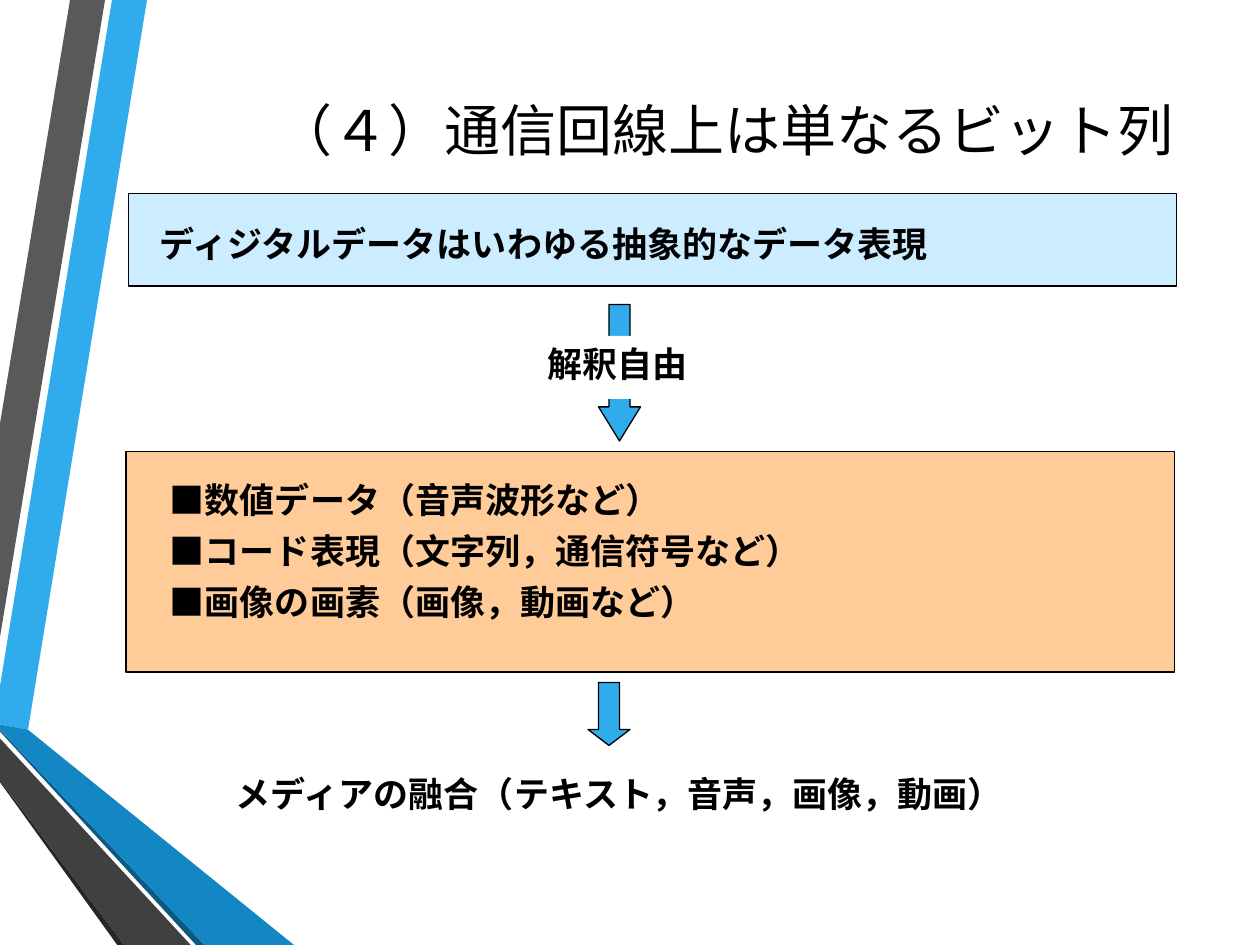
from pptx import Presentation
from pptx.dml.color import RGBColor
from pptx.enum.shapes import MSO_SHAPE
from pptx.enum.text import MSO_ANCHOR, PP_ALIGN
from pptx.util import Pt
from lxml.etree import SubElement
from pptx.oxml.ns import qn

BLACK = RGBColor(0, 0, 0)
WHITE = RGBColor(255, 255, 255)
SKY = RGBColor(0x30, 0xAC, 0xEC)
BLUE = RGBColor(0x12, 0x87, 0xC3)
NAVY = RGBColor(0x0C, 0x5A, 0x82)
GREY = RGBColor(0x59, 0x59, 0x59)
DARK = RGBColor(0x40, 0x40, 0x40)
COAL = RGBColor(0x26, 0x26, 0x26)
PALE = RGBColor(0xCC, 0xEC, 0xFF)
PEACH = RGBColor(0xFF, 0xCC, 0x99)

BANDS = [
    (SKY, [(0, 392), (0, 414), (16, 417), (84, 0), (64, 0)]),
    (GREY, [(60, 0), (40, 0), (0, 242), (0, 364)]),
    (COAL, [(0, 446), (0, 447), (67, 540), (71, 540)]),
    (NAVY, [(0, 417), (0, 418), (112, 540), (117, 540)]),
    (BLUE, [(0, 417), (117, 540), (168, 540), (16, 417), (0, 414)]),
    (DARK, [(0, 446), (71, 540), (109, 540), (0, 422)]),
]


def paint(shape, fill, line=None):
    shape.shadow.inherit = False
    shape.fill.solid()
    shape.fill.fore_color.rgb = fill
    if line is None:
        shape.line.fill.background()
    else:
        shape.line.color.rgb = line
        shape.line.width = Pt(0.75)


def add_band(slide, fill, points):
    pen = slide.shapes.build_freeform(*points[0], scale=Pt(1))
    pen.add_line_segments(points[1:], close=True)
    paint(pen.convert_to_shape(), fill)


def add_box(slide, area, fill, line=None):
    box = slide.shapes.add_shape(MSO_SHAPE.RECTANGLE, *map(Pt, area))
    paint(box, fill, line)


def add_arrow(slide, area, head):
    arrow = slide.shapes.add_shape(MSO_SHAPE.DOWN_ARROW, *map(Pt, area))
    arrow.adjustments[0] = 0.5
    arrow.adjustments[1] = head
    paint(arrow, SKY, BLACK)


def style(frame, font, size, bold, align, hang=0, gap=0):
    frame.word_wrap = True
    for para in frame.paragraphs:
        para.alignment = align
        para.space_before = Pt(gap)
        props = para._p.get_or_add_pPr()
        props.set("marL", str(Pt(hang)))
        props.set("indent", str(Pt(-hang)))
        SubElement(props, qn("a:buNone"))
        for run in para.runs:
            run.font.name = font
            run.font.size = Pt(size)
            run.font.bold = bold
            run.font.color.rgb = BLACK


def add_text(slide, area, text, align):
    frame = slide.shapes.add_textbox(*map(Pt, area)).text_frame
    frame.text = text
    style(frame, "Times New Roman", 20, True, align, 27, 5)


def fill_holder(holder, area, text):
    holder.left, holder.top, holder.width, holder.height = map(Pt, area)
    holder.text_frame.text = text
    holder.text_frame.vertical_anchor = MSO_ANCHOR.MIDDLE
    holder.element.getparent().append(holder.element)


def main():
    deck = Presentation()
    deck.slide_width, deck.slide_height = Pt(720), Pt(540)
    slide = deck.slides.add_slide(deck.slide_layouts[1])
    title, body = slide.placeholders

    for fill, points in BANDS:
        add_band(slide, fill, points)
    add_arrow(slide, (342, 174, 24, 78), 0.81)
    add_box(slide, (288, 192, 114, 36), WHITE)
    add_box(slide, (72, 258, 599, 126), PEACH, BLACK)
    add_box(slide, (73.5, 110.5, 599, 53), PALE, BLACK)

    fill_holder(title, (66, 33, 612, 81), "（４）通信回線上は単なるビット列")
    style(title.text_frame, "Calibri", 32, False, PP_ALIGN.RIGHT)
    fill_holder(body, (84, 119, 564, 40), "ディジタルデータはいわゆる抽象的なデータ表現")
    style(body.text_frame, "Calibri", 20, True, PP_ALIGN.LEFT, 22.5, 5)
    body.text_frame.paragraphs[0].space_after = Pt(6)

    items = ["数値データ（音声波形など）", "コード表現（文字列，通信符号など）", "画像の画素（画像，動画など）"]
    add_text(slide, (90, 270, 498, 102), "\n".join("■" + item for item in items), PP_ALIGN.LEFT)
    add_text(slide, (120, 438, 468, 36), "メディアの融合（テキスト，音声，画像，動画）", PP_ALIGN.CENTER)
    add_arrow(slide, (336, 390, 24, 36), 0.38)
    add_text(slide, (297, 192, 111.5, 36), "解釈自由", PP_ALIGN.CENTER)
    deck.save("out.pptx")


if __name__ == "__main__":
    main()
